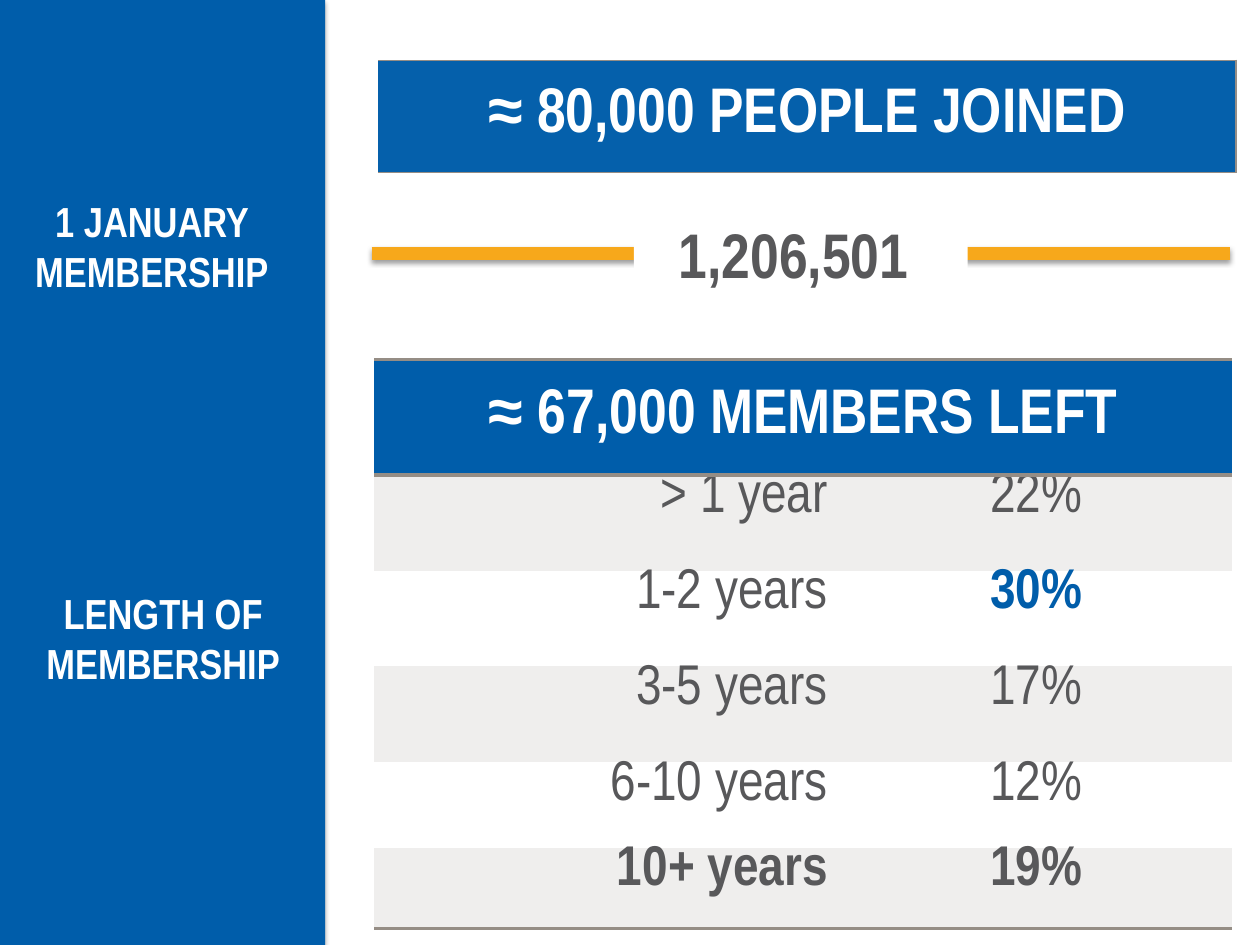
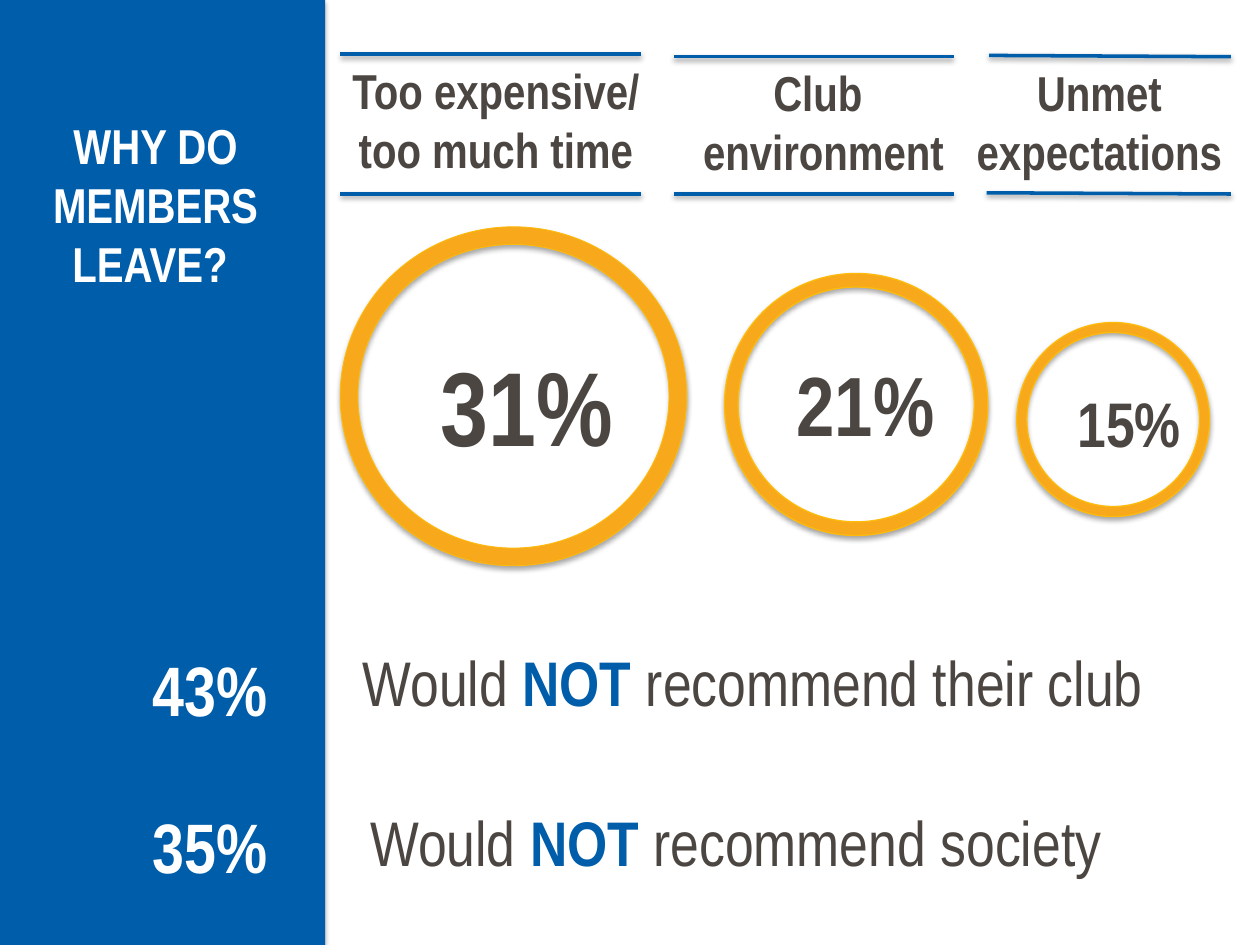
from dataclasses import dataclass

from lxml import etree
from pptx import Presentation
from pptx import util as u
from pptx.dml.color import RGBColor
from pptx.enum import shapes, text
from pptx.oxml import ns

SLIDE_WIDTH, SLIDE_HEIGHT = u.Inches(10), u.Inches(7.5)
COLUMN, ROW = SLIDE_WIDTH / 100, SLIDE_HEIGHT / 75
TITLE_ONLY = 5
PLAIN_TABLE_STYLE = "{2D5ABB26-0587-4C30-8999-92F81FD0307C}"
CENTER, LEFT, RIGHT = text.PP_ALIGN.CENTER, text.PP_ALIGN.LEFT, text.PP_ALIGN.RIGHT


@dataclass(frozen=True)
class Theme:
    font: str = "Arial Narrow"
    blue: str = "005DAA"
    gold: str = "F7A81B"
    gold_edge: str = "FEBB0B"
    white: str = "FFFFFF"
    band: str = "EFEEED"
    border: str = "958D85"
    gray: str = "58585A"
    dark: str = "4B4642"
    label: int = 24
    heading: int = 28
    cell: int = 32
    statement: int = 36
    share: int = 40


THEME = Theme()


@dataclass(frozen=True)
class Reason:
    lines: tuple
    label_box: tuple
    ring_box: tuple
    ring_edge: float
    percent: str
    percent_box: tuple
    percent_size: int
    rules: tuple


REASONS = (
    Reason(("Too expensive/", "too much time"), (25.6, 4.3, 27.5, 7.5),
           (27, 18, 27.5, 26.9), 0.5, "31%", (32.4, 26.6, 18.8, 11.7), 60,
           ((27, 4.3, 50.9, 4.3), (27, 15.4, 50.9, 15.4))),
    Reason(("Club ", "environment"), (51.6, 4.5, 27.5, 7.5),
           (57.5, 21.7, 20.9, 20.8), 0.75, "21%", (61.6, 27.5, 14.2, 10), 48,
           ((53.5, 4.5, 75.7, 4.5), (53.5, 15.4, 75.7, 15.4))),
    Reason(("Unmet expectations",), (73.5, 4.5, 27.5, 7.5),
           (80.7, 25.6, 15.3, 15.4), 0.75, "15%", (82.5, 30, 14.2, 8.5), 36,
           ((78.5, 4.4, 97.7, 4.5), (78.3, 15.3, 97.7, 15.4))),
)

MEMBERSHIP_LENGTHS = (
    ("> 1 year", "22%"),
    ("1-2 years", "30%"),
    ("3-5 years", "17%"),
    ("6-10 years", "12%"),
    ("10+ years", "19%"),
)


def color(value):
    return RGBColor.from_string(value)


def place(left, top, width, height):
    """Turn grid columns and rows into slide lengths."""
    return (u.Emu(round(left * COLUMN)), u.Emu(round(top * ROW)),
            u.Emu(round(width * COLUMN)), u.Emu(round(height * ROW)))


def add_element(parent, tag, **attributes):
    element = etree.SubElement(parent, ns.qn(tag))
    for name, value in attributes.items():
        element.set(name, str(value))
    return element


def cast_shadow(shape, distance=1.6, opacity=38):
    properties = shape._element.spPr
    for effects in properties.findall(ns.qn("a:effectLst")):
        properties.remove(effects)
    effects = add_element(properties, "a:effectLst")
    shadow = add_element(effects, "a:outerShdw", blurRad=u.Pt(3.1), dist=u.Pt(distance),
                         dir=90 * 60000, algn="ctr", rotWithShape=0)
    shade = add_element(shadow, "a:srgbClr", val="000000")
    add_element(shade, "a:alpha", val=opacity * 1000)


def add_run(paragraph, words, size, ink, bold=True):
    run = paragraph.add_run()
    run.text = words
    run.font.name = THEME.font
    run.font.size = u.Pt(size)
    run.font.bold = bold
    run.font.color.rgb = color(ink)


def write_lines(frame, lines, size, ink, alignment=CENTER):
    """Fill a frame with one paragraph whose lines are broken by hand."""
    frame.word_wrap = True
    frame.auto_size = text.MSO_AUTO_SIZE.NONE
    frame.vertical_anchor = text.MSO_ANCHOR.TOP
    paragraph = frame.paragraphs[0]
    paragraph.alignment = alignment
    for index, line in enumerate(lines):
        if index:
            paragraph.add_line_break()
        add_run(paragraph, line, size, ink)


def add_label(slide, box, lines, size, ink):
    label = slide.shapes.add_textbox(*place(*box))
    write_lines(label.text_frame, lines, size, ink)


def add_filled(slide, kind, box, fill):
    shape = slide.shapes.add_shape(kind, *place(*box))
    shape.shadow.inherit = False
    shape.fill.solid()
    shape.fill.fore_color.rgb = color(fill)
    shape.line.fill.background()
    return shape


def add_rule(slide, ends, ink, weight):
    begin_x, begin_y, end_x, end_y = place(*ends)
    rule = slide.shapes.add_connector(shapes.MSO_CONNECTOR.STRAIGHT,
                                      begin_x, begin_y, end_x, end_y)
    rule.line.color.rgb = color(ink)
    rule.line.width = u.Pt(weight)
    cast_shadow(rule)


def add_sidebar_slide(presentation, title, title_box, title_size):
    """Add a slide with the blue sidebar behind its title."""
    slide = presentation.slides.add_slide(presentation.slide_layouts[TITLE_ONLY])
    sidebar = add_filled(slide, shapes.MSO_SHAPE.RECTANGLE, (0, 0, 25.8, 75), THEME.blue)
    cast_shadow(sidebar)
    heading = slide.shapes.title
    heading._element.addprevious(sidebar._element)
    heading.left, heading.top, heading.width, heading.height = place(*title_box)
    write_lines(heading.text_frame, [title], title_size, THEME.white)
    return slide


def add_plain_table(slide, left, top, widths, heights):
    frame = slide.shapes.add_table(len(heights), len(widths),
                                   *place(left, top, sum(widths), sum(heights)))
    table = frame.table
    table.first_row = table.horz_banding = False
    table._tbl.tblPr.find(ns.qn("a:tableStyleId")).text = PLAIN_TABLE_STYLE
    for column, width in zip(table.columns, widths):
        column.width = u.Emu(round(width * COLUMN))
    for row, height in zip(table.rows, heights):
        row.height = u.Emu(round(height * ROW))
    return table


def fill_cell(cell, fill, opacity=100):
    cell.fill.solid()
    cell.fill.fore_color.rgb = color(fill)
    if opacity < 100:
        shade = cell._tc.tcPr.find(".//" + ns.qn("a:srgbClr"))
        add_element(shade, "a:alpha", val=opacity * 1000)


def border_cell(cell, sides, weight):
    """Draw borders on the sides given in schema order: L, R, T, B."""
    properties = cell._tc.get_or_add_tcPr()
    for index, side in enumerate(sides):
        line = add_element(properties, "a:ln" + side, w=u.Pt(weight))
        fill = add_element(line, "a:solidFill")
        add_element(fill, "a:srgbClr", val=THEME.border)
        properties.insert(index, line)


def write_cell(cell, words, size, ink, bold, alignment):
    paragraph = cell.text_frame.paragraphs[0]
    paragraph.alignment = alignment
    add_run(paragraph, words, size, ink, bold)
    return paragraph


def write_banner(cell, words):
    cell.vertical_anchor = text.MSO_ANCHOR.MIDDLE
    write_cell(cell, words, THEME.statement, THEME.white, True, CENTER)


def add_joined_banner(slide):
    cell = add_plain_table(slide, 30, 4.8, [68.1], [8.9]).cell(0, 0)
    fill_cell(cell, THEME.blue, opacity=98)
    border_cell(cell, "RTB", 1)
    write_banner(cell, "≈ 80,000 PEOPLE JOINED")


def add_left_table(slide):
    table = add_plain_table(slide, 29.7, 28.5, [37, 31.1],
                            [9.2, 7.6, 7.6, 7.6, 6.8, 6.4])
    for cell in table.rows[0].cells:
        fill_cell(cell, THEME.blue)
        border_cell(cell, "TB", 2)
    table.cell(0, 0).merge(table.cell(0, 1))
    write_banner(table.cell(0, 0), "≈ 67,000 MEMBERS LEFT")

    last = len(MEMBERSHIP_LENGTHS)
    for row, entry in enumerate(MEMBERSHIP_LENGTHS, start=1):
        for column, words in enumerate(entry):
            cell = table.cell(row, column)
            highlighted = words == "30%"
            fill_cell(cell, THEME.band if row % 2 else THEME.white)
            cell.margin_top = 0
            paragraph = write_cell(cell, words, THEME.cell,
                                   THEME.blue if highlighted else THEME.gray,
                                   highlighted or row == last,
                                   CENTER if column else RIGHT)
            paragraph.line_spacing = 0.9
            if row == last:
                border_cell(cell, "B", 2)


def add_reason(slide, reason):
    ring = add_filled(slide, shapes.MSO_SHAPE.DONUT, reason.ring_box, THEME.gold)
    ring.adjustments[0] = 0.052
    ring.line.color.rgb = color(THEME.gold_edge)
    ring.line.width = u.Pt(reason.ring_edge)
    cast_shadow(ring, distance=1.8, opacity=35)
    add_label(slide, reason.label_box, reason.lines, THEME.heading, THEME.dark)
    add_label(slide, reason.percent_box, [reason.percent], reason.percent_size, THEME.dark)
    for ends in reason.rules:
        add_rule(slide, ends, THEME.blue, 2)


def add_recommendation(slide, share, share_top, left, top, subject):
    add_label(slide, (7.5, share_top, 18.3, 7.5), [share], THEME.share, THEME.white)
    statement = slide.shapes.add_textbox(*place(left, top, 72.4, 7.5))
    write_lines(statement.text_frame, [], THEME.statement, THEME.dark, LEFT)
    paragraph = statement.text_frame.paragraphs[0]
    add_run(paragraph, "Would ", THEME.statement, THEME.dark, False)
    add_run(paragraph, "NOT ", THEME.statement, THEME.blue)
    add_run(paragraph, "recommend " + subject, THEME.statement, THEME.dark, False)


def build_membership_slide(presentation):
    slide = add_sidebar_slide(presentation, "1 JANUARY MEMBERSHIP",
                              (-1.7, 15, 27.5, 10), THEME.label)
    add_joined_banner(slide)
    add_rule(slide, (29.5, 20.1, 97.6, 20.1), THEME.gold, 7.5)
    total = add_filled(slide, shapes.MSO_SHAPE.RECTANGLE, (50.3, 16.6, 26.5, 7.1), THEME.white)
    write_lines(total.text_frame, ["1,206,501 "], THEME.statement, THEME.gray)
    add_left_table(slide)
    add_label(slide, (-0.8, 46.1, 27.5, 10), ["LENGTH OF MEMBERSHIP"],
              THEME.label, THEME.white)


def build_reasons_slide(presentation):
    slide = add_sidebar_slide(presentation, "WHY DO MEMBERS LEAVE? ",
                              (-1.4, 8.7, 27.5, 7.5), THEME.heading)
    for reason in REASONS:
        add_reason(slide, reason)
    add_recommendation(slide, "43%", 50.8, 27.8, 50.6, "their club")
    add_recommendation(slide, "35%", 63.3, 28.4, 63.3, "society")


def main():
    presentation = Presentation()
    presentation.slide_width, presentation.slide_height = SLIDE_WIDTH, SLIDE_HEIGHT
    build_membership_slide(presentation)
    build_reasons_slide(presentation)
    presentation.save("out.pptx")


if __name__ == "__main__":
    main()
